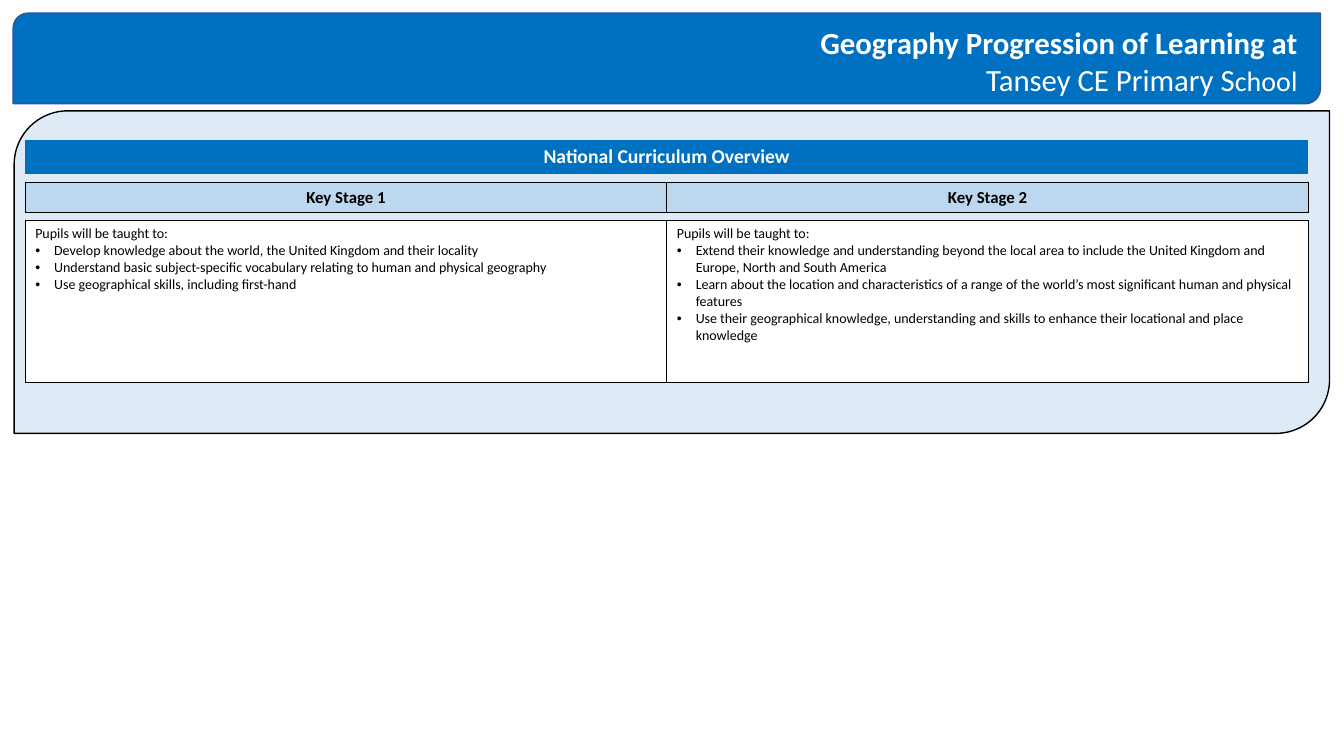
from lxml.etree import SubElement
from pptx import Presentation
from pptx.dml.color import RGBColor
from pptx.enum.shapes import MSO_SHAPE as Shape
from pptx.enum.text import MSO_ANCHOR as Anchor, PP_ALIGN as Align
from pptx.oxml import parse_xml
from pptx.oxml.ns import nsdecls, qn
from pptx.util import Pt

COLOURS = {
    "banner": "0070C0", "banner_line": "325491", "panel": "DEEBF7",
    "stage": "BDD7EE", "white": "FFFFFF", "black": "000000",
}
FONT = "Calibri"
NO_TABLE_STYLE = "{2D5ABB26-0587-4C30-8999-92F81FD0307C}"

# Each title line is a list of (text, size, bold) runs.
TITLE = [
    [("Geography Progression of Learning at", 22, True)],
    [("Tansey CE Primary S", 22, False), ("chool", 20, False)],
]
OVERVIEW = "National Curriculum Overview"
INTRODUCTION = "Pupils will be taught to:"
STAGES = {
    "Key Stage 1": [
        "Develop knowledge about the world, the United Kingdom and their locality",
        "Understand basic subject-specific vocabulary relating to human and physical geography",
        "Use geographical skills, including first-hand",
    ],
    "Key Stage 2": [
        "Extend their knowledge and understanding beyond the local area to include "
        "the United Kingdom and Europe, North and South America",
        "Learn about the location and characteristics of a range of the world’s most "
        "significant human and physical features",
        "Use their geographical knowledge, understanding and skills to enhance their "
        "locational and place knowledge",
    ],
}

# Boxes are left, top, width, height in points.
BANNER_BOX = (9.36, 9.36, 933.84, 64.8)
TITLE_BOX = (462.24, 13.68, 471.6, 60.48)
PANEL_BOX = (10.08, 79.2, 939.6, 230.4)
TABLE_LEFT, TABLE_WIDTH = 18, 916.56
BULLET_INDENT = 13.5

HEADING = {"size": 14, "bold": True, "colour": "white"}
STAGE_NAME = {"size": 12, "bold": True, "colour": "black"}
BODY = {"size": 10, "bold": False, "colour": "black"}


def colour(name):
    return RGBColor.from_string(COLOURS[name])


def points(box):
    return [Pt(value) for value in box]


def add_run(paragraph, text, style):
    run = paragraph.add_run()
    run.text = text
    values = {"name": FONT, "size": Pt(style["size"]), "bold": style["bold"]}
    for name, value in values.items():
        setattr(run.font, name, value)
    run.font.color.rgb = colour(style["colour"])


def next_paragraph(frame, index):
    return frame.add_paragraph() if index else frame.paragraphs[0]


def add_panel(slide, box, fill, line):
    shape = slide.shapes.add_shape(Shape.ROUND_2_DIAG_RECTANGLE, *points(box))
    shape.shadow.inherit = False
    shape.fill.solid()
    shape.fill.fore_color.rgb = colour(fill)
    shape.line.color.rgb = colour(line)
    shape.line.width = Pt(1)


def add_title(slide):
    frame = slide.shapes.add_textbox(*points(TITLE_BOX)).text_frame
    frame.word_wrap = True
    for index, line in enumerate(TITLE):
        paragraph = next_paragraph(frame, index)
        paragraph.alignment = Align.RIGHT
        for text, size, bold in line:
            add_run(paragraph, text, {"size": size, "bold": bold, "colour": "white"})


def add_bullet(paragraph):
    properties = paragraph._p.get_or_add_pPr()
    properties.set("marL", str(Pt(BULLET_INDENT)))
    properties.set("indent", str(-Pt(BULLET_INDENT)))
    SubElement(properties, qn("a:buFont"), typeface="Arial")
    SubElement(properties, qn("a:buChar"), char="•")


def add_borders(cell):
    properties = cell._tc.get_or_add_tcPr()
    for index, side in enumerate("LRTB"):
        properties.insert(index, parse_xml(
            f'<a:ln{side} {nsdecls("a")} w="{Pt(0.5)}"><a:solidFill>'
            f'<a:srgbClr val="{COLOURS["black"]}"/></a:solidFill></a:ln{side}>'))


def add_row(slide, top, height, cells, fill, style, alignment, anchor, bordered=True):
    """Add a one-row table; each cell is a lead line followed by its bullets."""
    box = points((TABLE_LEFT, top, TABLE_WIDTH, height))
    table = slide.shapes.add_table(1, len(cells), *box).table
    table.first_row = table.horz_banding = False
    table._tbl.tblPr.find(qn("a:tableStyleId")).text = NO_TABLE_STYLE
    for cell, lines in zip(table.rows[0].cells, cells):
        cell.vertical_anchor = anchor
        cell.fill.solid()
        cell.fill.fore_color.rgb = colour(fill)
        if bordered:
            add_borders(cell)
        for index, text in enumerate(lines):
            paragraph = next_paragraph(cell.text_frame, index)
            paragraph.alignment = alignment
            if index:
                add_bullet(paragraph)
            add_run(paragraph, text, style)


def main():
    presentation = Presentation()
    presentation.slide_width, presentation.slide_height = Pt(960), Pt(540)
    slide = presentation.slides.add_slide(presentation.slide_layouts[6])

    add_panel(slide, BANNER_BOX, "banner", "banner_line")
    add_title(slide)
    add_panel(slide, PANEL_BOX, "panel", "black")

    add_row(slide, 100.2, 24, [[OVERVIEW]], "banner", HEADING,
            Align.CENTER, Anchor.MIDDLE, bordered=False)
    add_row(slide, 130.3, 21.6, [[name] for name in STAGES], "stage", STAGE_NAME,
            Align.CENTER, Anchor.MIDDLE)
    add_row(slide, 157.4, 115.5, [[INTRODUCTION, *aims] for aims in STAGES.values()],
            "white", BODY, Align.LEFT, Anchor.TOP)

    presentation.save("out.pptx")


if __name__ == "__main__":
    main()
